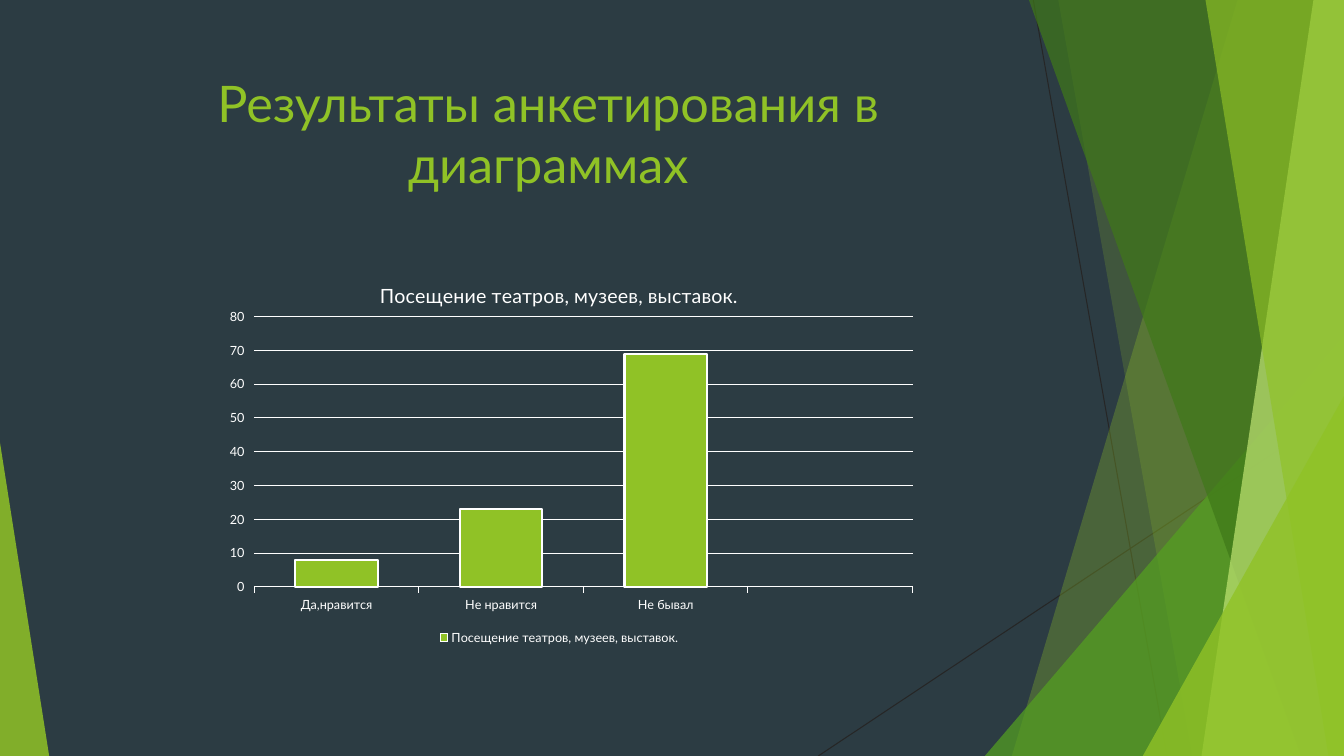
from dataclasses import dataclass

from lxml import etree
from pptx import Presentation
from pptx import util as u
from pptx.chart.data import CategoryChartData
from pptx.dml.color import RGBColor
from pptx.enum import chart as charts, shapes, text
from pptx.oxml.ns import qn


@dataclass(frozen=True)
class Theme:
    background: str = "2C3C43"
    lime: str = "90C226"
    green: str = "54A021"
    forest: str = "3F7819"
    pale: str = "C0E474"
    hairline: str = "262626"
    white: str = "FFFFFF"
    font: str = "Lato"
    title_size: float = 36
    chart_title_size: float = 14
    chart_size: float = 10
    label_size: float = 9


THEME = Theme()
SLIDE_WIDTH, SLIDE_HEIGHT = 33.87, 19.05


@dataclass(frozen=True)
class Box:
    """Region in centimetres."""
    left: float
    top: float
    width: float
    height: float

    def lengths(self):
        return [u.Cm(value) for value in (self.left, self.top, self.width, self.height)]


def set_font(font, size, color):
    font.name, font.size = THEME.font, u.Pt(size)
    font.color.rgb = RGBColor.from_string(color)


def set_line(line, color, width):
    line.color.rgb = RGBColor.from_string(color)
    line.width = u.Pt(width)


def paint(shape, color, opacity):
    """Translucent fill without outline or shadow."""
    shape.shadow.inherit = False
    shape.line.fill.background()
    shape.fill.solid()
    shape.fill.fore_color.rgb = RGBColor.from_string(color)
    color_element = shape.fill._xPr.find(qn("a:solidFill"))[0]
    etree.SubElement(color_element, qn("a:alpha"), val=str(opacity * 1000))


def add_hairline(slide, box, start, end):
    points = [u.Cm(value) for x, y in (start, end) for value in (box.left + x, box.top + y)]
    connector = slide.shapes.add_connector(shapes.MSO_CONNECTOR.STRAIGHT, *points)
    set_line(connector.line, THEME.hairline, 0.75)
    etree.SubElement(connector._element.spPr, qn("a:effectLst"))


def add_facet(slide, box, top_x, bottom_x, color, opacity):
    """Quadrilateral with a slanted left edge, reaching the right side of the box."""
    corners = [(top_x, 0), (box.width, 0), (box.width, box.height), (bottom_x, box.height)]
    points = [(u.Cm(box.left + x), u.Cm(box.top + y)) for x, y in corners]
    builder = slide.shapes.build_freeform(*points[0], scale=1.0)
    builder.add_line_segments(points[1:], close=True)
    paint(builder.convert_to_shape(), color, opacity)


def add_triangle(slide, box, apex, color, opacity):
    shape = slide.shapes.add_shape(shapes.MSO_SHAPE.ISOSCELES_TRIANGLE, *box.lengths())
    shape.adjustments[0] = apex
    paint(shape, color, opacity)


def add_right_triangle(slide, box, x, y, color, opacity):
    corner = Box(box.left + x, box.top + y, box.width - x, box.height - y)
    add_triangle(slide, corner, 1, color, opacity)


def add_decoration(slide, box):
    # Thin crossing lines
    add_hairline(slide, box, (5.42, 0), (8.79, box.height))
    add_hairline(slide, box, (box.width, 10.24), (0, box.height))
    # Overlapping facets, back to front
    add_facet(slide, box, 10.57, 4.88, THEME.lime, 30)
    add_facet(slide, box, 6.05, 9.43, THEME.lime, 20)
    add_right_triangle(slide, box, 4.2, 8.46, THEME.green, 72)
    add_facet(slide, box, 5.31, 12.17, THEME.forest, 70)
    add_facet(slide, box, 12.48, 9.66, THEME.pale, 70)
    add_facet(slide, box, 9.76, 12.86, THEME.lime, 65)
    add_right_triangle(slide, box, 8.18, 9.98, THEME.lime, 80)


def add_title(slide, box, title):
    frame = slide.shapes.add_textbox(*box.lengths()).text_frame
    frame.word_wrap = True
    frame.vertical_anchor = text.MSO_ANCHOR.TOP
    paragraph = frame.paragraphs[0]
    paragraph.text = title
    paragraph.alignment = text.PP_ALIGN.CENTER
    set_font(paragraph.font, THEME.title_size, THEME.lime)


def set_plot_layout(chart, **fractions):
    """Fix the inner plot area as fractions of the chart."""
    plot_area = chart._chartSpace.chart.plotArea
    for old in plot_area.findall(qn("c:layout")):
        plot_area.remove(old)
    layout = etree.Element(qn("c:layout"))
    plot_area.insert(0, layout)
    manual = etree.SubElement(layout, qn("c:manualLayout"))
    settings = {"layoutTarget": "inner", "xMode": "edge", "yMode": "edge", **fractions}
    for name, value in settings.items():
        etree.SubElement(manual, qn(f"c:{name}"), val=str(value))


def add_survey_chart(slide, box, name, answers):
    data = CategoryChartData()
    data.categories = list(answers)
    data.add_series(name, answers.values())
    chart = slide.shapes.add_chart(
        charts.XL_CHART_TYPE.COLUMN_CLUSTERED, *box.lengths(), data).chart
    set_font(chart.font, THEME.chart_size, THEME.white)
    set_plot_layout(chart, x=0.069, y=0.134, w=0.931, h=0.704)

    # Title and legend
    chart.has_title = True
    paragraph = chart.chart_title.text_frame.paragraphs[0]
    paragraph.text = name
    set_font(paragraph.font, THEME.chart_title_size, THEME.white)
    paragraph.font.bold = False
    chart.has_legend = True
    chart.legend.position = charts.XL_LEGEND_POSITION.BOTTOM
    chart.legend.include_in_layout = False
    set_font(chart.legend.font, THEME.label_size, THEME.white)

    # Axes
    for axis in (chart.category_axis, chart.value_axis):
        axis.major_tick_mark = charts.XL_TICK_MARK.OUTSIDE
        set_font(axis.tick_labels.font, THEME.label_size, THEME.white)
    set_line(chart.category_axis.format.line, THEME.white, 0.75)
    chart.value_axis.format.line.fill.background()
    set_line(chart.value_axis.major_gridlines.format.line, THEME.white, 0.75)

    # Columns
    plot = chart.plots[0]
    plot.gap_width = 100
    plot.vary_by_categories = False
    columns = plot.series[0].format
    columns.fill.solid()
    columns.fill.fore_color.rgb = RGBColor.from_string(THEME.lime)
    set_line(columns.line, THEME.white, 1.5)


def main():
    presentation = Presentation()
    presentation.slide_width = u.Cm(SLIDE_WIDTH)
    presentation.slide_height = u.Cm(SLIDE_HEIGHT)
    slide = presentation.slides.add_slide(presentation.slide_layouts[6])
    slide.background.fill.solid()
    slide.background.fill.fore_color.rgb = RGBColor.from_string(THEME.background)

    add_decoration(slide, Box(20.62, 0, 13.25, SLIDE_HEIGHT))
    add_triangle(slide, Box(0, 11.15, 1.24, 7.9), 0, THEME.lime, 85)
    add_title(slide, Box(1.88, 1.7, 23.88, 3.66), "Результаты анкетирования в диаграммах")
    add_survey_chart(
        slide, Box(5.18, 6.68, 17.83, 9.68), "Посещение театров, музеев, выставок.",
        {"Да,нравится": 8, "Не нравится": 23, "Не бывал": 69, "": None})
    presentation.save("out.pptx")


if __name__ == "__main__":
    main()
